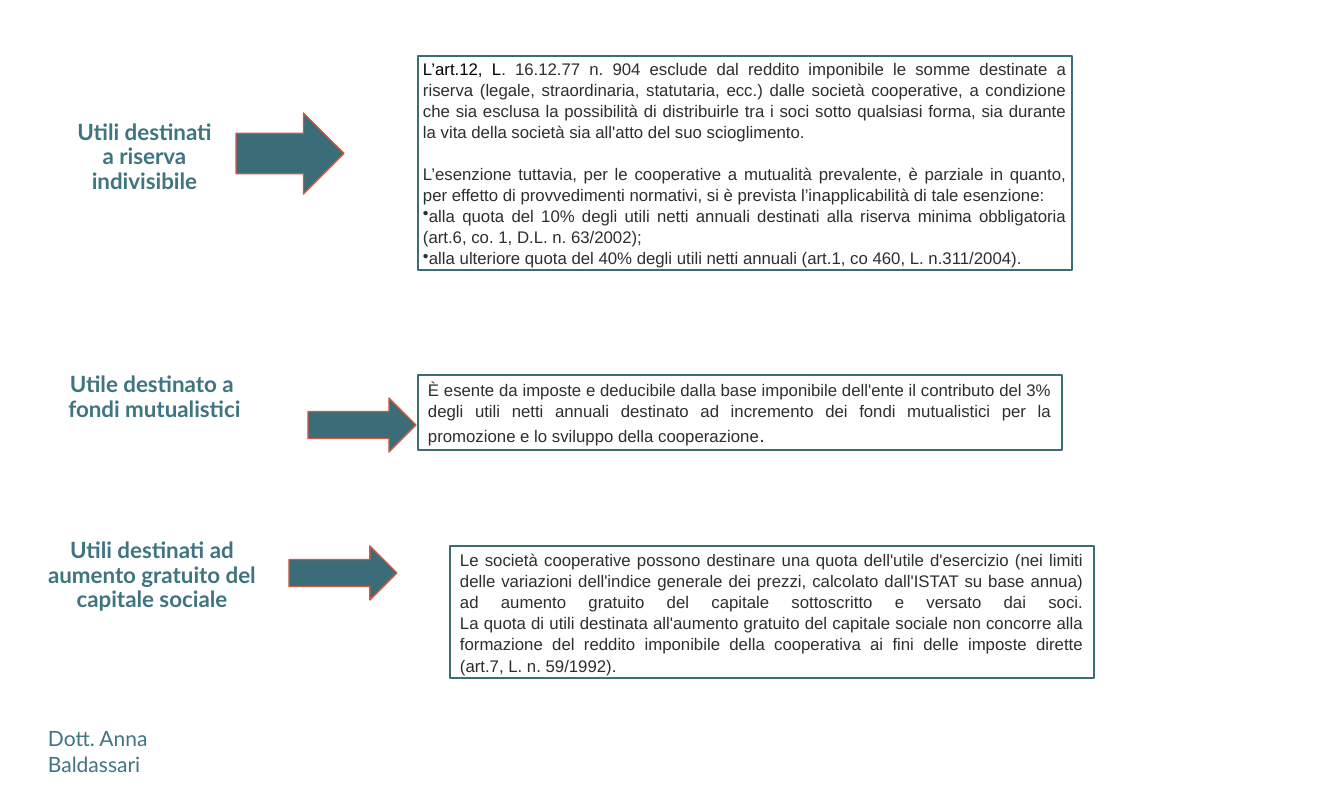
from lxml.etree import SubElement
from pptx import Presentation
from pptx.dml.color import RGBColor
from pptx.enum.shapes import MSO_SHAPE
from pptx.enum.text import MSO_ANCHOR, MSO_AUTO_SIZE, PP_ALIGN
from pptx.oxml.ns import qn
from pptx.util import Pt

EMU_PER_PX = 914400 / 100.8
COLORS = {"label": "3F7481", "teal": "3B6D79", "orange": "D15A3E",
          "ink": "2D2E2D", "black": "020202", "white": "FFFFFF"}
LABEL_FONT = {"name": "Lato", "size": Pt(16), "bold": True}
FOOTER_FONT = {"name": "Lato", "size": Pt(15), "bold": False}
NOTE_FONT = {"name": "Arial", "size": Pt(12), "bold": False}


def px(length):
    return round(length * EMU_PER_PX)


def color(name):
    return RGBColor.from_string(COLORS[name])


def apply(target, values):
    for name, value in values.items():
        setattr(target, name, value)


def place(shape, area, box):
    left, top, width, height = box
    apply(shape, {"left": px(area[0] + left), "top": px(area[1] + top),
                  "width": px(width), "height": px(height)})


def set_frame(frame, anchor, side=5, bottom=5):
    apply(frame, {"word_wrap": True, "auto_size": MSO_AUTO_SIZE.NONE,
                  "vertical_anchor": anchor,
                  "margin_left": px(side), "margin_right": px(side),
                  "margin_top": px(5), "margin_bottom": px(bottom)})


def add_span(para, text, font, ink):
    for index, line in enumerate(text.split("\n")):
        if index:
            para.add_line_break()
        span = para.add_run()
        span.text = line
        apply(span.font, font)
        span.font.color.rgb = color(ink)


def add_paras(frame, paras, layout):
    for index, spans in enumerate(paras):
        para = frame.add_paragraph() if index else frame.paragraphs[0]
        apply(para, layout)
        for text, font, ink in spans:
            add_span(para, text, font, ink)


def add_bullet(para):
    properties = para._p.get_or_add_pPr()
    properties.set("marL", "0")
    properties.set("indent", "0")
    SubElement(properties, qn("a:buChar")).set("char", "•")


def add_block(page, kind, area, box, fill, line):
    shape = page.shapes.add_shape(kind, 0, 0, 0, 0)
    place(shape, area, box)
    shape.shadow.inherit = False
    if fill:
        shape.fill.solid()
        shape.fill.fore_color.rgb = color(fill)
    else:
        shape.fill.background()
    shape.line.color.rgb = color(line)
    shape.line.width = Pt(1)
    return shape


def add_row(page, area, label, label_box, label_lines, label_bottom,
            arrow_box, note_box, note_paras, note_fill=None, note_side=10):
    place(label, area, label_box)
    set_frame(label.text_frame, MSO_ANCHOR.BOTTOM, bottom=label_bottom)
    add_paras(label.text_frame, [[(line, LABEL_FONT, "label")] for line in label_lines],
              {"alignment": PP_ALIGN.CENTER, "line_spacing": 0.9, "space_before": Pt(0)})
    add_block(page, MSO_SHAPE.RIGHT_ARROW, area, arrow_box, "teal", "orange")
    note = add_block(page, MSO_SHAPE.RECTANGLE, area, note_box, note_fill, "teal")
    set_frame(note.text_frame, MSO_ANCHOR.MIDDLE, side=note_side)
    add_paras(note.text_frame, note_paras,
              {"alignment": PP_ALIGN.JUSTIFY, "line_spacing": 1.05})
    return note.text_frame.paragraphs


def add_text_box(page):
    return page.shapes.add_textbox(0, 0, 0, 0)


def add_reserve_row(page, area):
    paras = add_row(
        page, area, page.shapes.title, (69, 0, 151, 173),
        ["Utili destinati a riserva indivisibile"], 34,
        (236, 58, 108, 81), (418, 1, 654, 214),
        [[("L’art.12, L", NOTE_FONT, "black"),
          (". 16.12.77 n. 904 esclude dal reddito imponibile le somme destinate a riserva "
           "(legale, straordinaria, statutaria, ecc.) dalle società cooperative, a condizione "
           "che sia esclusa la possibilità di distribuirle tra i soci sotto qualsiasi forma, "
           "sia durante la vita della società sia all'atto del suo scioglimento.",
           NOTE_FONT, "ink")],
         [("L’esenzione tuttavia, per le cooperative a mutualità prevalente, è parziale in "
           "quanto, per effetto di provvedimenti normativi, si è prevista l’inapplicabilità "
           "di tale esenzione:", NOTE_FONT, "ink")],
         [("alla quota del 10% degli utili netti annuali destinati alla riserva minima "
           "obbligatoria (art.6, co. 1, D.L. n. 63/2002);", NOTE_FONT, "ink")],
         [("alla ulteriore quota del 40% degli utili netti annuali "
           "(art.1, co 460, L. n.311/2004).", NOTE_FONT, "ink")]],
        note_fill="white", note_side=5)
    paras[1].space_before = Pt(14.5)
    for para in paras[2:]:
        add_bullet(para)


def add_fund_row(page, area):
    add_row(
        page, area, add_text_box(page), (-7, 0, 323, 151),
        ["Utile destinato a ", "fondi mutualistici"], 55,
        (308, 72, 108, 54), (418, 49, 644, 75),
        [[("È esente da imposte e deducibile dalla base imponibile dell'ente il contributo "
           "del 3% degli utili netti annuali destinato ad incremento dei fondi mutualistici "
           "per la promozione e lo sviluppo della cooperazione", NOTE_FONT, "ink"),
          (". ", {**NOTE_FONT, "size": Pt(14)}, "ink")]])


def add_capital_row(page, area):
    add_row(
        page, area, add_text_box(page), (29, 0, 246, 84),
        ["Utili destinati ad aumento gratuito del capitale sociale"], 5,
        (289, 13, 108, 54), (450, 13, 644, 132),
        [[("Le società cooperative possono destinare una quota dell'utile d'esercizio (nei "
           "limiti delle variazioni dell'indice generale dei prezzi, calcolato dall'ISTAT su "
           "base annua) ad aumento gratuito del capitale sottoscritto e versato dai soci.\n"
           "La quota di utili destinata all'aumento gratuito del capitale sociale non "
           "concorre alla formazione del reddito imponibile della cooperativa ai fini delle "
           "imposte dirette (art.7, L. n. 59/1992).", NOTE_FONT, "ink")]])


def add_footer(page, area):
    footer = add_text_box(page)
    place(footer, area, (0, 0, 190, 60))
    set_frame(footer.text_frame, MSO_ANCHOR.TOP)
    add_paras(footer.text_frame, [[("Dott. Anna Baldassari", FOOTER_FONT, "label")]],
              {"alignment": PP_ALIGN.LEFT})


def main():
    deck = Presentation()
    apply(deck, {"slide_width": px(1344), "slide_height": px(794)})
    page = deck.slides.add_slide(deck.slide_layouts[5])
    add_footer(page, (43, 721))
    add_reserve_row(page, (0, 55))
    add_fund_row(page, (0, 326))
    add_capital_row(page, (0, 533))
    deck.save("out.pptx")


if __name__ == "__main__":
    main()
